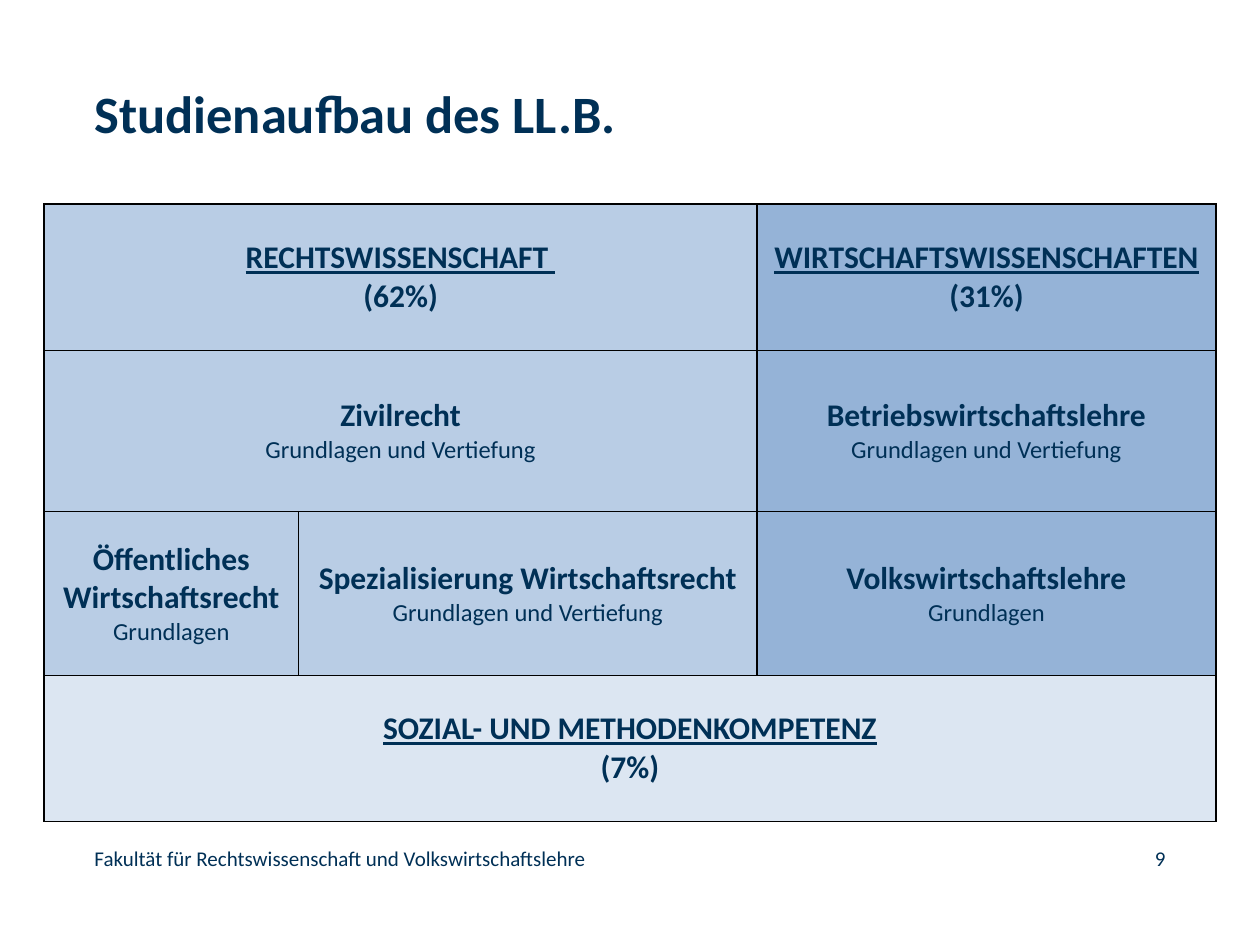
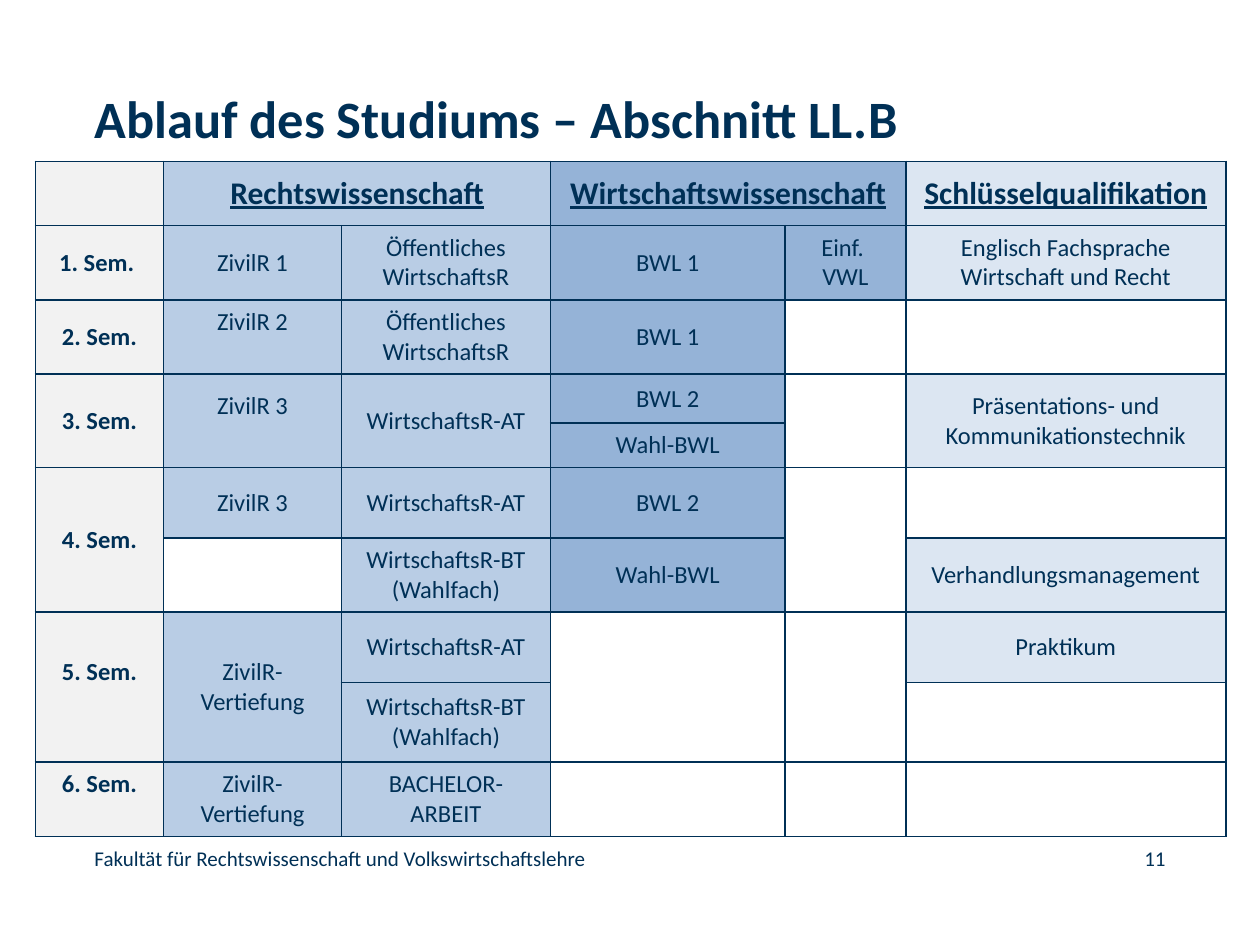
"""Build two slides on the structure and the course of the LL.B. programme."""
from lxml.etree import SubElement
from pptx import Presentation
from pptx.dml.color import RGBColor
from pptx.enum.text import MSO_ANCHOR, PP_ALIGN
from pptx.oxml.ns import qn
from pptx.util import Inches, Pt

NAVY = RGBColor(0x00, 0x30, 0x56)
BLACK = RGBColor(0x00, 0x00, 0x00)
WHITE = RGBColor(0xFF, 0xFF, 0xFF)
LAW = RGBColor(0xB9, 0xCD, 0xE5)
ECONOMICS = RGBColor(0x95, 0xB3, 0xD7)
SKILLS = RGBColor(0xDC, 0xE6, 0xF2)
SEMESTER = RGBColor(0xF2, 0xF2, 0xF2)

BASE = {"name": "Calibri", "bold": False, "underline": False}
TITLE = BASE | {"size": Pt(30), "bold": True}
FOOTER = BASE | {"size": Pt(12)}
PLAIN = BASE | {"size": Pt(14)}
LABEL = PLAIN | {"bold": True}
STRONG = BASE | {"size": Pt(18), "bold": True}
HEADING = STRONG | {"underline": True}

LEFT, ABOVE = "<", "^"
MARGIN = 0.75
FOOTER_TOP = 6.71
FACULTY = "Fakultät für Rechtswissenschaft und Volkswirtschaftslehre"
ONE_LINE = Inches(0.24)


def write(frame, lines, formats, align):
    """Fill a text frame with one paragraph per line."""
    frame.word_wrap = True
    for index, (line, style) in enumerate(zip(lines, formats)):
        paragraph = frame.paragraphs[0] if index == 0 else frame.add_paragraph()
        paragraph.alignment = align
        run = paragraph.add_run()
        run.text = line
        run.font.color.rgb = NAVY
        for attribute, value in style.items():
            setattr(run.font, attribute, value)


def outline(cell, color):
    """Draw a one-point border on all sides of a cell."""
    properties = cell._tc.get_or_add_tcPr()
    for side in ("a:lnL", "a:lnR", "a:lnT", "a:lnB"):
        line = SubElement(properties, qn(side), w=str(Pt(1)))
        SubElement(SubElement(line, qn("a:solidFill")), qn("a:srgbClr"), val=str(color))


structure = {
    "title": "Studienaufbau des LL.B.",
    "title_top": 0.6,
    "number": "9",
    "origin": (0.35, 1.62),
    "border": BLACK,
    "columns": [2.02, 3.64, 3.64],
    "rows": [1.16, 1.28, 1.3, 1.16],
    "texts": [
        ["RECHTSWISSENSCHAFT \n(62%)", LEFT, "WIRTSCHAFTSWISSENSCHAFTEN\n(31%)"],
        ["Zivilrecht\nGrundlagen und Vertiefung", LEFT,
         "Betriebswirtschaftslehre\nGrundlagen und Vertiefung"],
        ["Öffentliches Wirtschaftsrecht\nGrundlagen",
         "Spezialisierung Wirtschaftsrecht\nGrundlagen und Vertiefung",
         "Volkswirtschaftslehre\nGrundlagen"],
        ["SOZIAL- UND METHODENKOMPETENZ\n(7%)", LEFT, LEFT],
    ],
    "fills": [[LAW, LAW, ECONOMICS]] * 3 + [[SKILLS] * 3],
    "formats": [[pair] * 3 for pair in (
        (HEADING, STRONG), (STRONG, PLAIN), (STRONG, PLAIN), (HEADING, STRONG))],
    "raised": set(),
}

schedule = {
    "title": "Ablauf des Studiums – Abschnitt LL.B",
    "title_top": 0.64,
    "number": "11",
    "origin": (0.28, 1.28),
    "border": NAVY,
    "columns": [1.02, 1.41, 1.66, 1.86, 0.96, 2.54],
    "rows": [0.51, 0.59, 0.59, 0.39, 0.35, 0.56, 0.59, 0.56, 0.63, 0.59],
    "texts": [
        ["", "Rechtswissenschaft", LEFT, "Wirtschaftswissenschaft", LEFT,
         "Schlüsselqualifikation"],
        ["1. Sem. ", "ZivilR 1", "Öffentliches WirtschaftsR", "BWL 1", "Einf. \nVWL",
         "Englisch Fachsprache Wirtschaft und Recht"],
        ["2. Sem.", "ZivilR 2", "Öffentliches WirtschaftsR", "BWL 1", "", ""],
        ["3. Sem.", "ZivilR 3", "WirtschaftsR-AT", "BWL 2", "",
         "Präsentations- und Kommunikationstechnik"],
        [ABOVE, ABOVE, ABOVE, "Wahl-BWL", ABOVE, ABOVE],
        ["4. Sem.", "ZivilR 3", "WirtschaftsR-AT", "BWL 2", "", ""],
        [ABOVE, "", "WirtschaftsR-BT (Wahlfach)", "Wahl-BWL", ABOVE,
         "Verhandlungsmanagement"],
        ["5. Sem.", "ZivilR-Vertiefung", "WirtschaftsR-AT", "", "", "Praktikum"],
        [ABOVE, ABOVE, "WirtschaftsR-BT (Wahlfach)", ABOVE, ABOVE, ""],
        ["6. Sem.", "ZivilR-Vertiefung", "BACHELOR-ARBEIT", "", "", ""],
    ],
    "fills": [[SEMESTER, LAW, LAW, ECONOMICS, ECONOMICS, SKILLS]] * 10,
    "formats": [[(HEADING,)] * 6] + [[(LABEL,)] + [(PLAIN, PLAIN)] * 5] * 9,
    "raised": {(2, 1), (3, 1), (7, 0), (9, 0)},
}

presentation = Presentation()
presentation.slide_width = Inches(10)
presentation.slide_height = Inches(7.5)

for plan in (structure, schedule):
    slide = presentation.slides.add_slide(presentation.slide_layouts[6])

    for text, left, top, width, height, style, align in (
        (plan["title"], MARGIN, plan["title_top"], 7.35, 0.59, TITLE, PP_ALIGN.LEFT),
        (FACULTY, MARGIN, FOOTER_TOP, 6.46, 0.2, FOOTER, PP_ALIGN.LEFT),
        (plan["number"], 8.1, FOOTER_TOP, 1.15, 0.2, FOOTER, PP_ALIGN.RIGHT),
    ):
        frame = slide.shapes.add_textbox(*map(Inches, (left, top, width, height))).text_frame
        for side in ("left", "right", "top", "bottom"):
            setattr(frame, f"margin_{side}", 0)
        frame.vertical_anchor = MSO_ANCHOR.MIDDLE
        write(frame, [text], [style], align)

    columns, rows = plan["columns"], plan["rows"]
    extent = (*plan["origin"], sum(columns), sum(rows))
    table = slide.shapes.add_table(len(rows), len(columns), *map(Inches, extent)).table
    table.first_row = table.horz_banding = False
    for column, width in zip(table.columns, columns):
        column.width = Inches(width)
    for row, height in zip(table.rows, rows):
        row.height = Inches(height)

    for r, texts in enumerate(plan["texts"]):
        for c, text in enumerate(texts):
            cell = table.cell(r, c)
            outline(cell, plan["border"])
            cell.fill.solid()
            cell.fill.fore_color.rgb = plan["fills"][r][c] if text or r == 0 else WHITE
            cell.vertical_anchor = MSO_ANCHOR.MIDDLE
            if text in ("", LEFT, ABOVE):
                continue
            write(cell.text_frame, text.split("\n"), plan["formats"][r][c], PP_ALIGN.CENTER)
            if (r, c) in plan["raised"]:
                cell.margin_bottom += ONE_LINE

    for r, texts in enumerate(plan["texts"]):
        for c, text in enumerate(texts):
            if text in (LEFT, ABOVE):
                continue
            last_row, last_column = r, c
            while last_column + 1 < len(columns) and texts[last_column + 1] == LEFT:
                last_column += 1
            while last_row + 1 < len(rows) and plan["texts"][last_row + 1][c] == ABOVE:
                last_row += 1
            if (last_row, last_column) != (r, c):
                table.cell(r, c).merge(table.cell(last_row, last_column))

presentation.save("out.pptx")
